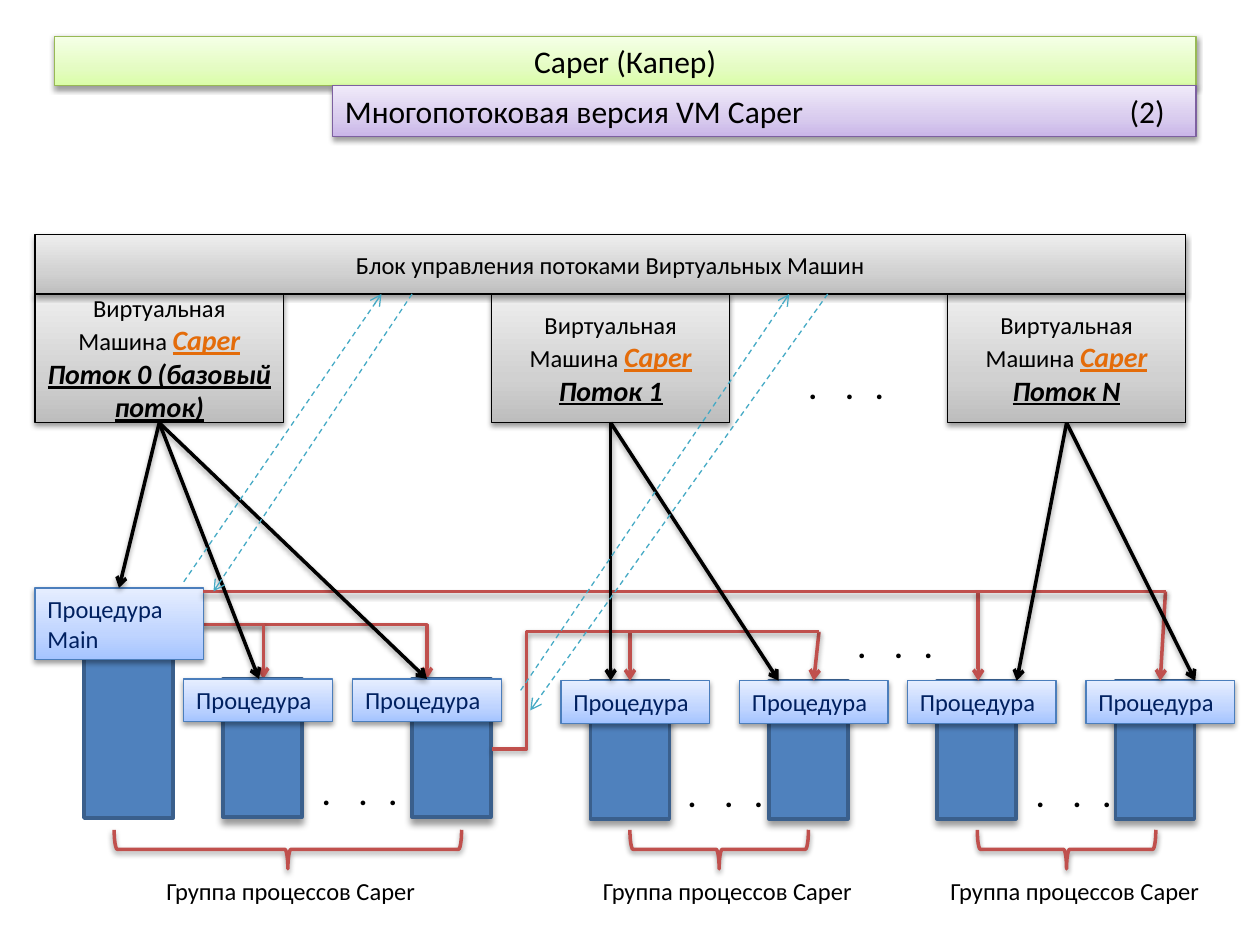
from dataclasses import dataclass

from lxml import etree
from pptx import Presentation
from pptx.dml.color import RGBColor
from pptx.enum import dml, shapes, text
from pptx.oxml import ns
from pptx.util import Pt


@dataclass(frozen=True)
class Theme:
    font: str = "Calibri"
    heading: int = 18
    accent: int = 16
    body: int = 14
    ink: str = "000000"
    navy: str = "002060"
    orange: str = "E46C0A"
    red: str = "C0504D"
    teal: str = "46AAC5"
    bar: str = "4F81BD"
    bar_edge: str = "3A5F8C"
    green: tuple = ("DAFDA7", "E4FCC2", "F5FFE7", "98B955")
    purple: tuple = ("C9B5E8", "D8CBEE", "F0EAF9", "7D60A0")
    gray: tuple = ("BDBDBD", "D1D1D1", "EEEEEE", "000000")
    blue: tuple = ("A4C4FF", "BFD4FF", "E6EEFF", "4B7EBC")
    soft_shadow: tuple = (3.15, 1.57, 38)
    deep_shadow: tuple = (4, 3, 40)


THEME = Theme()
RECT = shapes.MSO_SHAPE.RECTANGLE
CENTER = text.PP_ALIGN.CENTER
VM_TOP, VM_HEIGHT = 168, 73.6
VM_BOTTOM = VM_TOP + VM_HEIGHT
BUS = 338


def rgb(color):
    return RGBColor.from_string(color)


def child(parent, tag, **attributes):
    values = {key: str(value) for key, value in attributes.items()}
    return etree.SubElement(parent, ns.qn(tag), values)


def set_effect(item, shadow):
    properties = item._element.spPr
    effects = child(properties, "a:effectLst")
    if shadow:
        blur, distance, alpha = shadow
        outer = child(effects, "a:outerShdw", blurRad=Pt(blur), dist=Pt(distance),
                      dir=5400000, rotWithShape=0)
        color = child(outer, "a:srgbClr", val=THEME.ink)
        child(color, "a:alpha", val=alpha * 1000)


def set_line(item, color, width):
    item.line.color.rgb = rgb(color)
    item.line.width = Pt(width)


def add_text(paragraph, words, *, size=THEME.body, color=THEME.ink, bold=False,
             emphasis=False, align=None, tabs=(), indent=0):
    paragraph.alignment = align
    if tabs:
        properties = paragraph._p.get_or_add_pPr()
        properties.set("marL", str(Pt(indent)))
        stops = child(properties, "a:tabLst")
        for position in tabs:
            child(stops, "a:tab", pos=Pt(position), algn="l")
    run = paragraph.add_run()
    run.text = words
    font = run.font
    font.name, font.size = THEME.font, Pt(size)
    font.color.rgb = rgb(color)
    font.bold = bold or emphasis
    font.italic = font.underline = emphasis


def add_block(slide, left, top, width, height, fill, edge, weight, shadow):
    block = slide.shapes.add_shape(RECT, Pt(left), Pt(top), Pt(width), Pt(height))
    if isinstance(fill, str):
        block.fill.solid()
        block.fill.fore_color.rgb = rgb(fill)
    else:
        block.fill.gradient()
        block.fill.gradient_angle = 90
        stops = block._element.spPr.find(".//" + ns.qn("a:gsLst"))
        for stop in list(stops):
            stops.remove(stop)
        for position, color in zip((0, 35, 100), fill):
            child(child(stops, "a:gs", pos=position * 1000), "a:srgbClr", val=color)
    set_line(block, edge, weight)
    set_effect(block, shadow)
    return block


def add_panel(slide, left, top, width, height, palette, middle=False):
    panel = add_block(slide, left, top, width, height, palette[:3], palette[3],
                      0.75, THEME.soft_shadow)
    frame = panel.text_frame
    frame.word_wrap = True
    frame.vertical_anchor = text.MSO_ANCHOR.MIDDLE if middle else text.MSO_ANCHOR.TOP
    return frame.paragraphs[0]


def add_label(slide, left, top, width, height):
    box = slide.shapes.add_textbox(Pt(left), Pt(top), Pt(width), Pt(height))
    box.text_frame.word_wrap = True
    return box.text_frame.paragraphs[0]


def add_dots(slide, left, top):
    add_text(add_label(slide, left, top, 63, 29), ".\t.\t.", size=THEME.heading,
             bold=True, indent=4, tabs=(21, 38))


def add_link(slide, start, end, color, weight=2, arrow=True, dashed=False,
             bend=None, adjust=None):
    kind = shapes.MSO_CONNECTOR.ELBOW if bend else shapes.MSO_CONNECTOR.STRAIGHT
    link = slide.shapes.add_connector(kind, *map(Pt, start + end))
    set_line(link, color, weight)
    if dashed:
        link.line.dash_style = dml.MSO_LINE.DASH
    if arrow:
        child(link.line._get_or_add_ln(), "a:tailEnd", type="arrow")
    if bend:
        geometry = link._element.spPr.find(ns.qn("a:prstGeom"))
        geometry.set("prst", bend)
        if adjust:
            child(geometry.find(ns.qn("a:avLst")), "a:gd", name="adj1",
                  fmla=f"val {adjust}")
    set_effect(link, None if dashed else THEME.soft_shadow)


def add_machine(slide, left, width, thread):
    first = add_panel(slide, left, VM_TOP, width, VM_HEIGHT, THEME.gray, middle=True)
    add_text(first, "Виртуальная Машина ", align=CENTER)
    add_text(first, "Caper", size=THEME.accent, color=THEME.orange, emphasis=True,
             align=CENTER)
    second = first._parent.add_paragraph()
    add_text(second, thread, size=THEME.accent, emphasis=True, align=CENTER)


def add_procedure(slide, label_left, bar_left, top):
    add_block(slide, bar_left, top, 45, 79, THEME.bar, THEME.bar_edge, 2,
              THEME.deep_shadow)
    add_text(add_panel(slide, label_left, top, 85, 24.5, THEME.blue), "Процедура",
             color=THEME.navy)


def add_brace(slide, center, span, caption_left):
    depth, middle = 22.3, 485.3
    brace = slide.shapes.add_shape(shapes.MSO_SHAPE.LEFT_BRACE, Pt(center - depth / 2),
                                   Pt(middle - span / 2), Pt(depth), Pt(span))
    brace.rotation = 270
    brace.adjustments[0], brace.adjustments[1] = 0.08, 0.5
    brace.fill.background()
    set_line(brace, THEME.red, 2)
    set_effect(brace, THEME.soft_shadow)
    add_text(add_label(slide, caption_left, 497, 164, 24.5), "Группа процессов Caper")


def main():
    deck = Presentation()
    deck.slide_width, deck.slide_height = Pt(720), Pt(540)
    slide = deck.slides.add_slide(deck.slide_layouts[6])

    add_text(add_panel(slide, 31, 20.7, 652.5, 28.3, THEME.green, middle=True),
             "Caper (Капер)", size=THEME.heading, align=CENTER)
    add_text(add_panel(slide, 190, 49, 493.5, 29, THEME.purple),
             "Многопотоковая версия VM Caper\t(2)", size=THEME.heading, tabs=(448.5,))

    add_block(slide, 48, 337, 51, 130.5, THEME.bar, THEME.bar_edge, 2, None)
    for end in ((244, 388), (150.5, 388)):
        add_link(slide, (116, 357), end, THEME.red, bend="bentConnector2")
    add_text(add_panel(slide, 20, 336, 96.5, 41, THEME.blue), "Процедура Main",
             color=THEME.navy)

    for label_left, bar_left, top in (
            (105, 127.5, 388), (201.5, 235.5, 388), (320.5, 337.5, 389),
            (422.5, 439.5, 389), (518.5, 535.5, 389), (620.5, 637.5, 389)):
        add_procedure(slide, label_left, bar_left, top)

    for start, end in (((360, 361), (360, 389)), ((468, 361), (465, 389)),
                       ((559, BUS), (559, 389)), ((666, BUS), (663, 389))):
        add_link(slide, start, end, THEME.red)
    add_link(slide, (281, 428), (468, 361), THEME.red, arrow=False,
             bend="bentConnector3", adjust=10600)
    add_link(slide, (116, BUS), (666, BUS), THEME.red, arrow=False)

    for left, width, thread, targets in (
            (20, 142, "Поток 0 (базовый поток)", ((68, 336), (148, 388), (244, 388))),
            (281, 136, "Поток 1", ((349, 389), (445, 389))),
            (541.5, 136, "Поток N", ((581, 389), (683, 389)))):
        add_machine(slide, left, width, thread)
        for target in targets:
            add_link(slide, (left + width / 2, VM_BOTTOM), target, THEME.ink)

    for left, top in ((173, 439), (382, 440), (581, 440), (451, 207), (479, 355)):
        add_dots(slide, left, top)

    add_text(add_panel(slide, 20, 134, 657.5, 34, THEME.gray, middle=True),
             "Блок управления потоками Виртуальных Машин", align=CENTER)

    for center, span, caption_left in ((164.5, 198.5, 88), (411, 102, 337.5),
                                       (609.5, 102, 536)):
        add_brace(slide, center, span, caption_left)

    for start, end in (((105, 332.5), (218, VM_TOP)), ((235.5, VM_TOP), (122, BUS)),
                       ((297.5, 394.5), (451, VM_TOP)), ((473, VM_TOP), (303, 406))):
        add_link(slide, start, end, THEME.teal, weight=0.75, dashed=True)

    deck.save("out.pptx")


if __name__ == "__main__":
    main()
